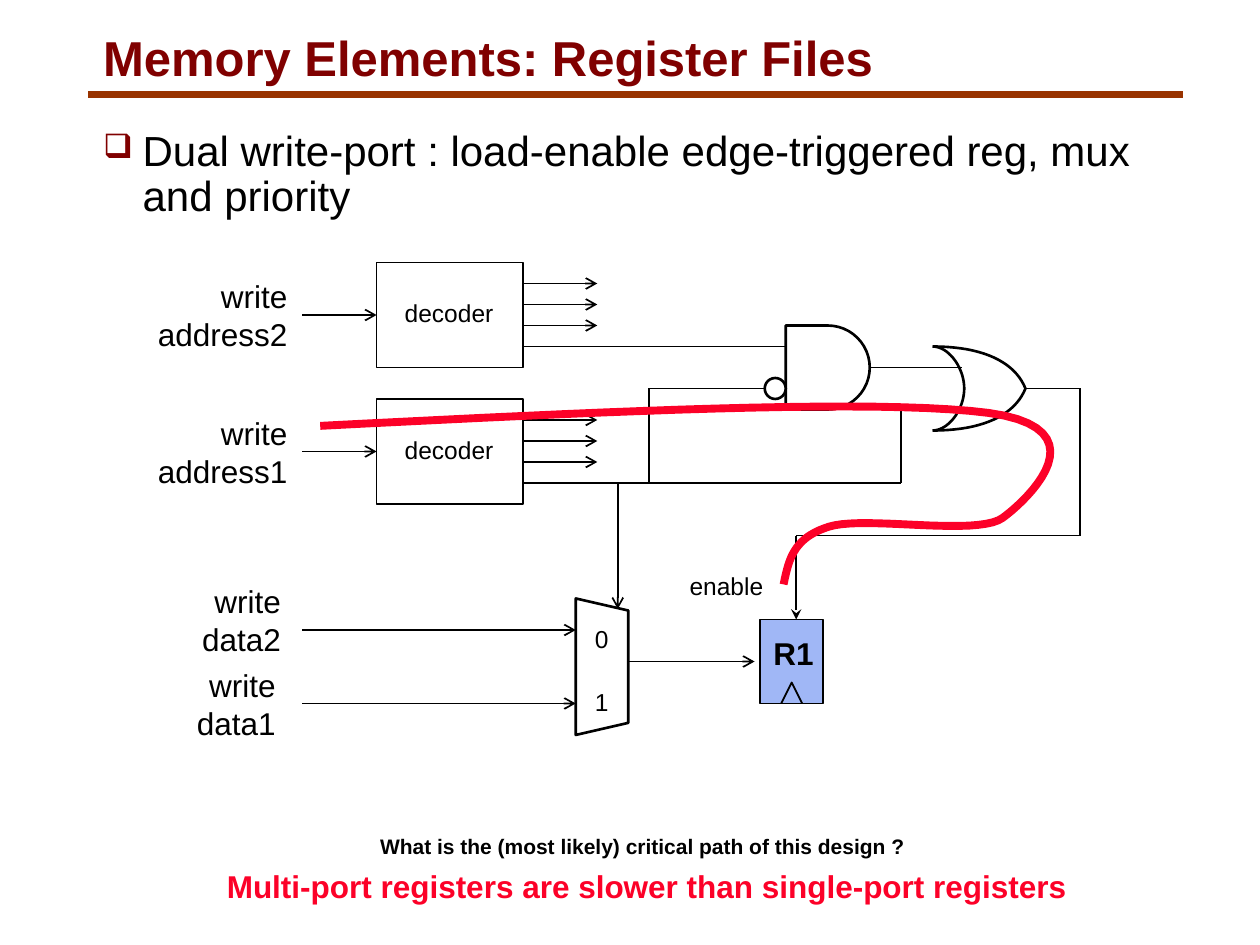
from lxml import etree
from pptx import Presentation
from pptx import util as u
from pptx.dml.color import RGBColor
from pptx.enum import shapes, text
from pptx.oxml.ns import qn

BLACK, WHITE, MAROON, RED = "000000", "FFFFFF", "800000", "FC0128"
LEFT, CENTER, RIGHT = text.PP_ALIGN.LEFT, text.PP_ALIGN.CENTER, text.PP_ALIGN.RIGHT
SHAPE = shapes.MSO_SHAPE
DECODER_LEFT, DECODER_RIGHT, INPUT_LEFT = 215.2, 299, 172.8


def rgb(color):
    return RGBColor.from_string(color)


def add_text(slide, box, lines, size=14, color=BLACK, bold=False,
             align=CENTER, wrap=False, spacing=None, insets=(5, 2.5)):
    sp = slide.shapes.add_textbox(*map(u.Pt, box))
    tf = sp.text_frame
    tf.word_wrap = wrap
    tf.auto_size = text.MSO_AUTO_SIZE.SHAPE_TO_FIT_TEXT
    tf.margin_left = tf.margin_right = u.Pt(insets[0])
    tf.margin_top = tf.margin_bottom = u.Pt(insets[1])
    for i, line in enumerate(lines):
        p = tf.add_paragraph() if i else tf.paragraphs[0]
        p.alignment = align
        if spacing:
            p.line_spacing = spacing
        r = p.add_run()
        r.text = line
        r.font.name, r.font.size, r.font.bold = "Arial", u.Pt(size), bold
        r.font.color.rgb = rgb(color)
    return tf


def add_bullet(p, char, color, percent, indent):
    pPr = p._p.get_or_add_pPr()
    pPr.set("marL", str(u.Pt(indent)))
    pPr.set("indent", str(u.Pt(-indent)))
    clr = etree.SubElement(pPr, qn("a:buClr"))
    etree.SubElement(clr, qn("a:srgbClr"), val=color)
    etree.SubElement(pPr, qn("a:buSzPct"), val=str(percent * 1000))
    etree.SubElement(pPr, qn("a:buChar"), char=char)


def style(sp, fill=None, color=BLACK, width=1):
    sp.shadow.inherit = False
    if fill:
        sp.fill.solid()
        sp.fill.fore_color.rgb = rgb(fill)
    else:
        sp.fill.background()
    sp.line.color.rgb = rgb(color)
    sp.line.width = u.Pt(width)


def add_box(slide, kind, box, fill=None, width=1):
    sp = slide.shapes.add_shape(kind, *map(u.Pt, box))
    style(sp, fill, width=width)
    return sp


def add_wire(slide, start, end, color=BLACK, width=1, head=None):
    sp = slide.shapes.add_connector(
        shapes.MSO_CONNECTOR.STRAIGHT, *map(u.Pt, (*start, *end)))
    sp.line.color.rgb = rgb(color)
    sp.line.width = u.Pt(width)
    if head:
        etree.SubElement(sp.line._get_or_add_ln(), qn("a:tailEnd"), type=head)
    etree.SubElement(sp._element.spPr, qn("a:effectLst"))


def add_path(slide, points, color=BLACK, width=1):
    start, *rest = [(u.Pt(x), u.Pt(y)) for x, y in points]
    fb = slide.shapes.build_freeform(*start)
    fb.add_line_segments(rest, close=False)
    style(fb.convert_to_shape(), color=color, width=width)


def bezier(points, steps=20):
    """Points along joined cubic curves: a start, then three points per curve."""
    result = [points[0]]
    for i in range(0, len(points) - 1, 3):
        curve = points[i:i + 4]
        for t in (k / steps for k in range(1, steps + 1)):
            weights = ((1 - t) ** 3, 3 * t * (1 - t) ** 2, 3 * t * t * (1 - t), t ** 3)
            result.append(tuple(sum(w * pt[axis] for w, pt in zip(weights, curve))
                                for axis in (0, 1)))
    return result


def add_decoder(slide, top, address):
    add_wire(slide, (INPUT_LEFT, top + 30), (DECODER_LEFT, top + 30), head="arrow")
    add_text(slide, (84.2, top + 6, 85, 47.5), ["write", address], 18, align=RIGHT)
    add_box(slide, SHAPE.RECTANGLE,
            (DECODER_LEFT, top, DECODER_RIGHT - DECODER_LEFT, 60))
    add_text(slide, (226, top + 18, 61.2, 21), ["decoder"])
    for y in (top + 12, top + 24, top + 36):
        add_wire(slide, (DECODER_RIGHT, y), (341.3, y), head="arrow")


def add_register(slide):
    add_box(slide, SHAPE.RECTANGLE, (434.2, 354, 36, 48), "A0B7F6")
    add_path(slide, [(446.4, 402), (452.4, 390), (458.4, 402)])
    add_text(slide, (437, 360, 33, 26), ["R1"], 18, bold=True)
    add_text(slide, (388.8, 324, 52.6, 21), ["enable"])


def add_mux(slide):
    sp = add_box(slide, SHAPE.TRAPEZOID, (305, 366, 78, 30), WHITE, 1.5)
    sp.adjustments[0] = 0.23
    sp.rotation = 90
    for label, top in (("0", 354), ("1", 390)):
        add_text(slide, (334.8, top, 18, 21), [label])
    for label, left, top, y in (("data2", 110.2, 330, 360), ("data1", 107.2, 378, 402)):
        add_text(slide, (left, top, 55.4, 47.5), ["write", label], 18, align=RIGHT)
        add_wire(slide, (INPUT_LEFT, y), (329, y), head="arrow")
    add_wire(slide, (359.2, 378), (431.2, 378), head="arrow")


def add_gates(slide):
    add_box(slide, SHAPE.FLOWCHART_DELAY, (449, 186, 48, 48), width=1.5)
    for start, end in (((449, 222), (425, 222)), ((449, 198), (425, 198)),
                       ((549.5, 210), (497, 210)), ((586, 222), (617, 222)),
                       ((547, 234), (515, 234))):
        add_wire(slide, start, end, width=0.75)
    add_box(slide, SHAPE.OVAL, (437, 216, 12, 12), WHITE, 1.5)
    top, bottom, tip = (533, 198), (533, 246), (586, 222)
    for curve in ([top, (542, 198), (551, 210), (551, 222),
                   (551, 234), (542, 246), bottom],
                  [top, (562, 198), (580, 207), tip],
                  [bottom, (562, 246), (580, 237), tip]):
        add_path(slide, bezier(curve), width=1.5)


def add_routing(slide):
    for start, end, head in (
            ((299, 198), (425, 198), None),
            ((299, 276), (515, 276), None),
            ((371, 276), (371, 222), None),
            ((371, 222), (437, 222), None),
            ((515, 276), (515, 234), None),
            ((353, 276), (353, 348), "arrow"),
            ((617, 222), (617, 306), None),
            ((455, 306), (617, 306), None),
            ((455, 306), (455, 354), "stealth")):
        add_wire(slide, start, end, head=head)


def add_critical_path(slide):
    add_path(slide, bezier([
        (183, 243.4), (341, 235.4), (499.7, 227.5), (565, 236),
        (630, 244.8), (588, 285), (573, 296),
        (558, 306.7), (494.6, 294.5), (473.8, 301),
        (453, 307.4), (450.7, 320.4), (447.8, 334)]), RED, 4.5)


def main():
    prs = Presentation()
    prs.slide_width, prs.slide_height = u.Pt(720), u.Pt(540)
    slide = prs.slides.add_slide(prs.slide_layouts[6])
    add_wire(slide, (50.4, 54), (676, 54), "993300", 4.5)
    add_text(slide, (54, 18, 455, 34), ["Memory Elements: Register Files"],
             28, MAROON, True, LEFT, spacing=0.87)
    tf = add_text(slide, (54, 72, 636, 56),
                  ["Dual write-port : load-enable edge-triggered reg, mux and priority"],
                  24, align=LEFT, wrap=True, spacing=0.9)
    add_bullet(tf.paragraphs[0], "❑", MAROON, 80, 22.5)
    add_register(slide)
    add_decoder(slide, 150, "address2")
    add_decoder(slide, 228, "address1")
    add_mux(slide)
    add_gates(slide)
    add_routing(slide)
    add_text(slide, (210.2, 474, 314, 19),
             ["What is the (most likely) critical path of this design ?"], 12, bold=True)
    add_critical_path(slide)
    add_text(slide, (120.2, 492, 499, 29),
             ["Multi-port registers are slower than single-port registers"],
             18, RED, True, insets=(7.2, 3.6))
    prs.save("out.pptx")


if __name__ == "__main__":
    main()
